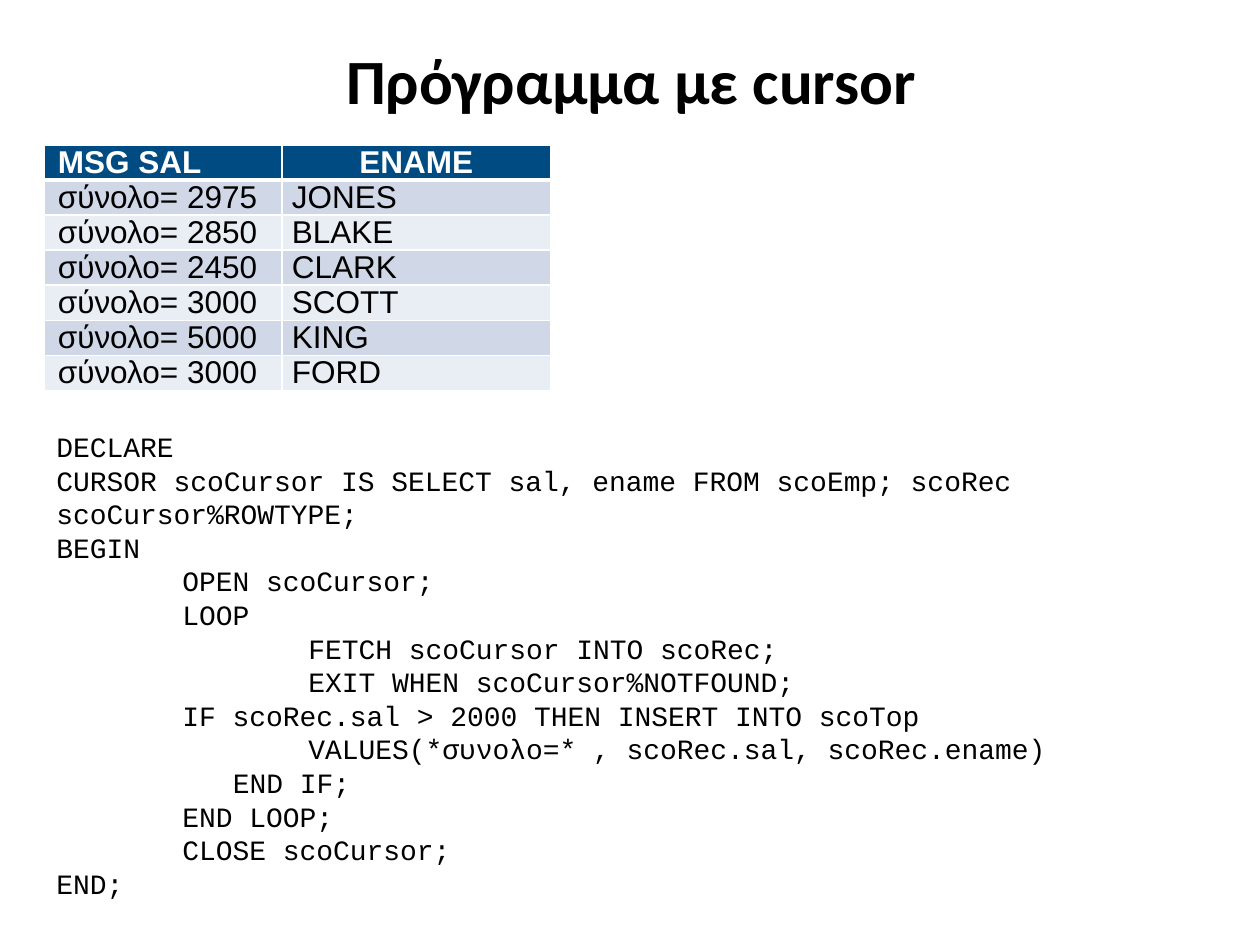
"""Build the slide that shows a cursor program and its result table."""
from dataclasses import dataclass

from lxml.etree import SubElement
from pptx import Presentation
from pptx.dml.color import RGBColor as Rgb
from pptx.enum.text import MSO_ANCHOR as Anchor, MSO_AUTO_SIZE as AutoSize, PP_ALIGN as Align
from pptx.oxml.ns import qn
from pptx.util import Pt

COLORS = {
    "text": "000000",
    "header": "004B82",
    "light": "FFFFFF",
    "odd_row": "D0D8E8",
    "even_row": "E9EDF4",
}
COLUMN_WIDTHS = (136, 153.4)
COLUMN_INDENTS = (7.2, 5)
ROW_HEIGHT = 17.3
TAB = 72
CODE_CHAR = 9.6


@dataclass(frozen=True)
class Salary:
    message: str
    employee: str


@dataclass(frozen=True)
class CodeLine:
    text: str
    indent: float = 0


SALARIES = (
    Salary("σύνολο= 2975", "JONES"),
    Salary("σύνολο= 2850", "BLAKE"),
    Salary("σύνολο= 2450", "CLARK"),
    Salary("σύνολο= 3000", "SCOTT"),
    Salary("σύνολο= 5000", "KING"),
    Salary("σύνολο= 3000", "FORD"),
)
PROGRAM = (
    CodeLine("DECLARE"),
    CodeLine("CURSOR scoCursor IS SELECT sal, ename FROM scoEmp; scoRec scoCursor%ROWTYPE;"),
    CodeLine("BEGIN"),
    CodeLine("OPEN scoCursor;", TAB),
    CodeLine("LOOP", TAB),
    CodeLine("FETCH scoCursor INTO scoRec;", 2 * TAB),
    CodeLine("EXIT WHEN scoCursor%NOTFOUND;", 2 * TAB),
    CodeLine("IF scoRec.sal > 2000 THEN INSERT INTO scoTop", TAB),
    CodeLine("VALUES(*συνολο=* , scoRec.sal, scoRec.ename)", 2 * TAB),
    CodeLine("END IF;", TAB + 3 * CODE_CHAR),
    CodeLine("END LOOP;", TAB),
    CodeLine("CLOSE scoCursor;", TAB),
    CodeLine("END;"),
)


def write(paragraph, text: str, *, font: str, size: float, color: str = "text",
          bold: bool = False, align: Align = Align.LEFT, indent: float = 0,
          spacing: float | None = None) -> None:
    """Write one formatted run into a paragraph."""
    run = paragraph.add_run()
    run.text = text
    run.font.name = font
    run.font.size = Pt(size)
    run.font.bold = bold
    run.font.color.rgb = Rgb.from_string(COLORS[color])
    paragraph.alignment = align
    if indent:
        properties = paragraph._p.get_or_add_pPr()
        properties.set("marL", str(Pt(indent)))
        properties.set("indent", "0")
    if spacing:
        paragraph.line_spacing = Pt(spacing)


def add_borders(cell, top: float, bottom: float) -> None:
    """Draw light borders on the four sides of a cell."""
    properties = cell._tc.get_or_add_tcPr()
    for side, width in (("L", 1), ("R", 1), ("T", top), ("B", bottom)):
        line = SubElement(properties, qn(f"a:ln{side}"), w=str(Pt(width)))
        fill = SubElement(line, qn("a:solidFill"))
        SubElement(fill, qn("a:srgbClr"), val=COLORS["light"])


def fill_cell(cell, text: str, row: int, column: int) -> None:
    """Format one table cell according to its row and column."""
    is_header = row == 0
    is_centered = is_header and column == 1
    cell.margin_left = cell.margin_right = Pt(0.7)
    cell.margin_top = cell.margin_bottom = Pt(0)
    add_borders(cell, top=3 if row == 1 else 1, bottom=3 if is_header else 1)
    background = "header" if is_header else "odd_row" if row % 2 else "even_row"
    cell.fill.solid()
    cell.fill.fore_color.rgb = Rgb.from_string(COLORS[background])
    write(cell.text_frame.paragraphs[0], text, font="Arial", size=18, bold=is_header,
          color="light" if is_header else "text",
          align=Align.CENTER if is_centered else Align.LEFT,
          indent=0 if is_centered else COLUMN_INDENTS[column], spacing=20)


def add_salaries(slide) -> None:
    """Add the table of messages and employees."""
    rows = (Salary("MSG SAL", "ΕΝΑΜΕ"), *SALARIES)
    salaries = slide.shapes.add_table(
        len(rows), len(COLUMN_WIDTHS), Pt(25.2), Pt(82.8),
        Pt(sum(COLUMN_WIDTHS)), Pt(ROW_HEIGHT * len(rows))).table
    for column, width in zip(salaries.columns, COLUMN_WIDTHS):
        column.width = Pt(width)
    for row, salary in enumerate(rows):
        salaries.rows[row].height = Pt(ROW_HEIGHT)
        for column, text in enumerate((salary.message, salary.employee)):
            fill_cell(salaries.cell(row, column), text, row, column)


def add_program(slide) -> None:
    """Add the listing of the program."""
    listing = slide.shapes.add_textbox(Pt(25.2), Pt(242), Pt(629.3), Pt(278.6)).text_frame
    listing.word_wrap = True
    listing.auto_size = AutoSize.SHAPE_TO_FIT_TEXT
    for number, line in enumerate(PROGRAM):
        paragraph = listing.add_paragraph() if number else listing.paragraphs[0]
        write(paragraph, line.text, font="Courier New", size=16, indent=line.indent)


def add_title(slide) -> None:
    """Place and format the title."""
    title = slide.shapes.title
    title.left, title.top, title.width, title.height = Pt(36.7), Pt(9.4), Pt(648), Pt(71.3)
    title.text_frame.vertical_anchor = Anchor.MIDDLE
    write(title.text_frame.paragraphs[0], "Πρόγραμμα με cursor",
          font="Calibri", size=36, bold=True, align=Align.CENTER)


def main() -> None:
    """Build and save the presentation."""
    presentation = Presentation()
    presentation.slide_width, presentation.slide_height = Pt(720), Pt(540)
    slide = presentation.slides.add_slide(presentation.slide_layouts.get_by_name("Title Only"))
    add_title(slide)
    add_salaries(slide)
    add_program(slide)
    presentation.save("out.pptx")


if __name__ == "__main__":
    main()
